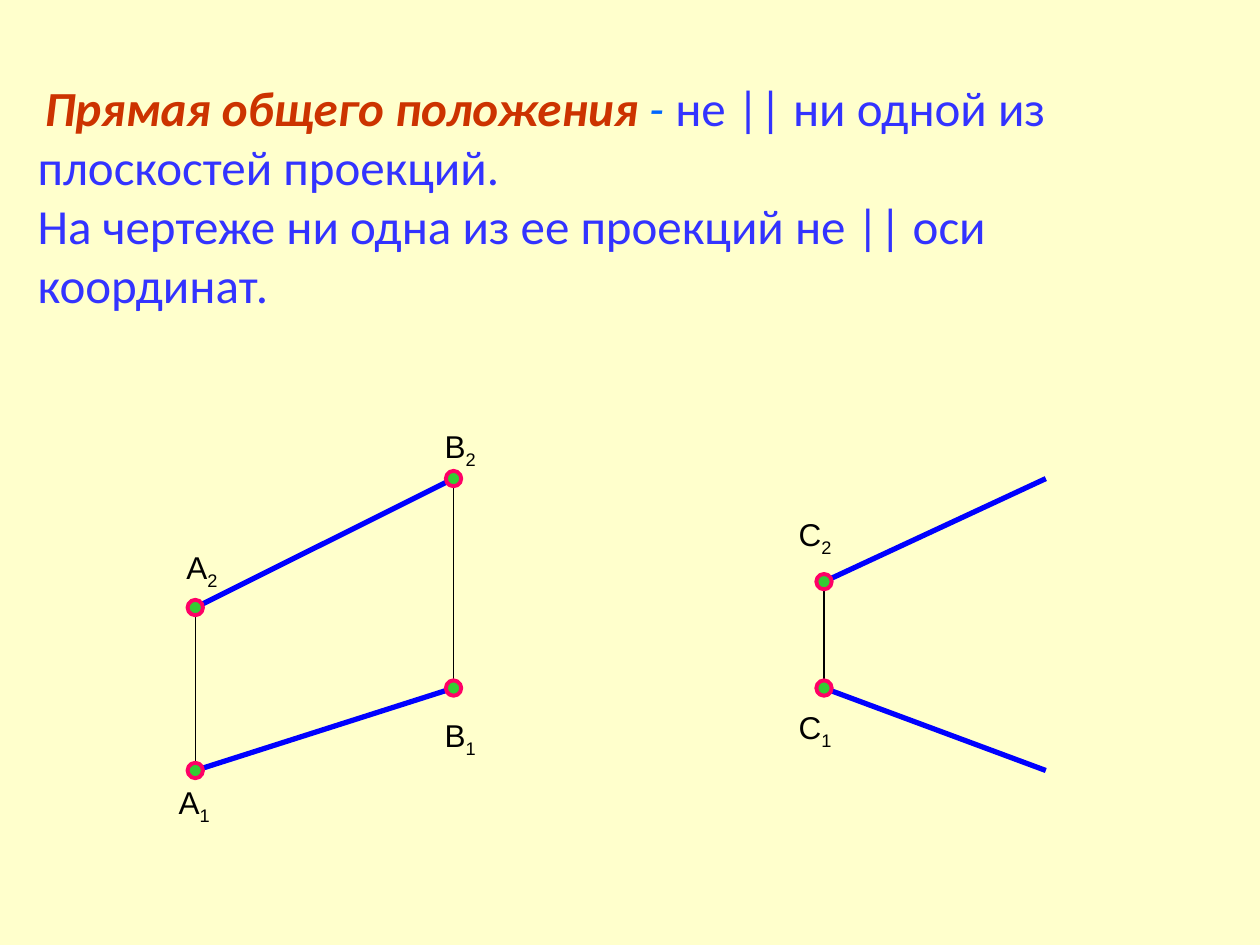
"""Build a slide on the projections of a line in general position."""
from lxml.etree import SubElement
from pptx import Presentation
from pptx.dml.color import RGBColor
from pptx.enum.shapes import MSO_CONNECTOR, MSO_SHAPE
from pptx.enum.text import MSO_AUTO_SIZE
from pptx.oxml.ns import qn
from pptx.util import Pt


def color(value):
    return RGBColor.from_string(value)


presentation = Presentation()
presentation.slide_width, presentation.slide_height = Pt(720), Pt(540)
slide = presentation.slides.add_slide(presentation.slide_layouts[6])
slide.background.fill.solid()
slide.background.fill.fore_color.rgb = color("FFFFCC")

points = {
    "А2": (111.6, 347.2), "А1": (111.6, 440.3),
    "В2": (259.2, 273.5), "В1": (259.2, 393.2),
    "С2": (470.9, 332.4), "С1": (470.9, 393.2),
}
upper_end, lower_end = (597.6, 273.5), (597.6, 440.3)
projections = [
    (points["А2"], points["В2"]), (points["А1"], points["В1"]),
    (points["С2"], upper_end), (points["С1"], lower_end),
]
links = [(points[letter + "2"], points[letter + "1"]) for letter in "АВС"]

for segments, line_color, width in ((projections, "0000FF", 3), (links, "000000", 0.75)):
    for start, end in segments:
        connector = slide.shapes.add_connector(
            MSO_CONNECTOR.STRAIGHT, *(Pt(length) for length in start + end))
        connector.line.color.rgb = color(line_color)
        connector.line.width = Pt(width)
        SubElement(connector._element.spPr, qn("a:effectLst"))

diameter = 8.8
for x, y in points.values():
    dot = slide.shapes.add_shape(
        MSO_SHAPE.OVAL, Pt(x - diameter / 2), Pt(y - diameter / 2), Pt(diameter), Pt(diameter))
    dot.shadow.inherit = False
    dot.fill.solid()
    dot.fill.fore_color.rgb = color("33CC33")
    dot.line.color.rgb = color("FF0066")
    dot.line.width = Pt(2.25)

label_positions = {
    "А2": (99.4, 309.6), "А1": (95, 444.2), "В1": (247, 405.4),
    "В2": (247, 240.5), "С1": (449.3, 401), "С2": (449.3, 290.9),
}
for name, (left, top) in label_positions.items():
    label = slide.shapes.add_textbox(Pt(left), Pt(top), Pt(33.5), Pt(28.8))
    label.text_frame.word_wrap = False
    paragraph = label.text_frame.paragraphs[0]
    for character in name:
        run = paragraph.add_run()
        run.text = character
    run.font._element.set("baseline", "-25000")
    paragraph.font.name = "Arial"
    paragraph.font.size = Pt(18)
    paragraph.font.color.rgb = color("000000")

definition = slide.shapes.add_textbox(Pt(14.4), Pt(41), Pt(685.4), Pt(143.3))
frame = definition.text_frame
frame.word_wrap = True
frame.auto_size = MSO_AUTO_SIZE.SHAPE_TO_FIT_TEXT
statements = [
    [("Прямая общего положения", "CC3300", True, True),
     (" - ", "0066FF", False, True),
     ("не || ни одной из плоскостей проекций.", "3333FF", False, False)],
    [("На чертеже ни одна из ее проекций не || оси координат.", "3333FF", False, False)],
]
for index, statement in enumerate(statements):
    paragraph = frame.add_paragraph() if index else frame.paragraphs[0]
    paragraph.font.name = "Calibri"
    paragraph.font.size = Pt(28)
    for text, text_color, bold, italic in statement:
        run = paragraph.add_run()
        run.text = text
        run.font.color.rgb = color(text_color)
        run.font.bold, run.font.italic = bold, italic
frame.paragraphs[0]._p.get_or_add_pPr().set("indent", str(Pt(4)))

presentation.save("out.pptx")
